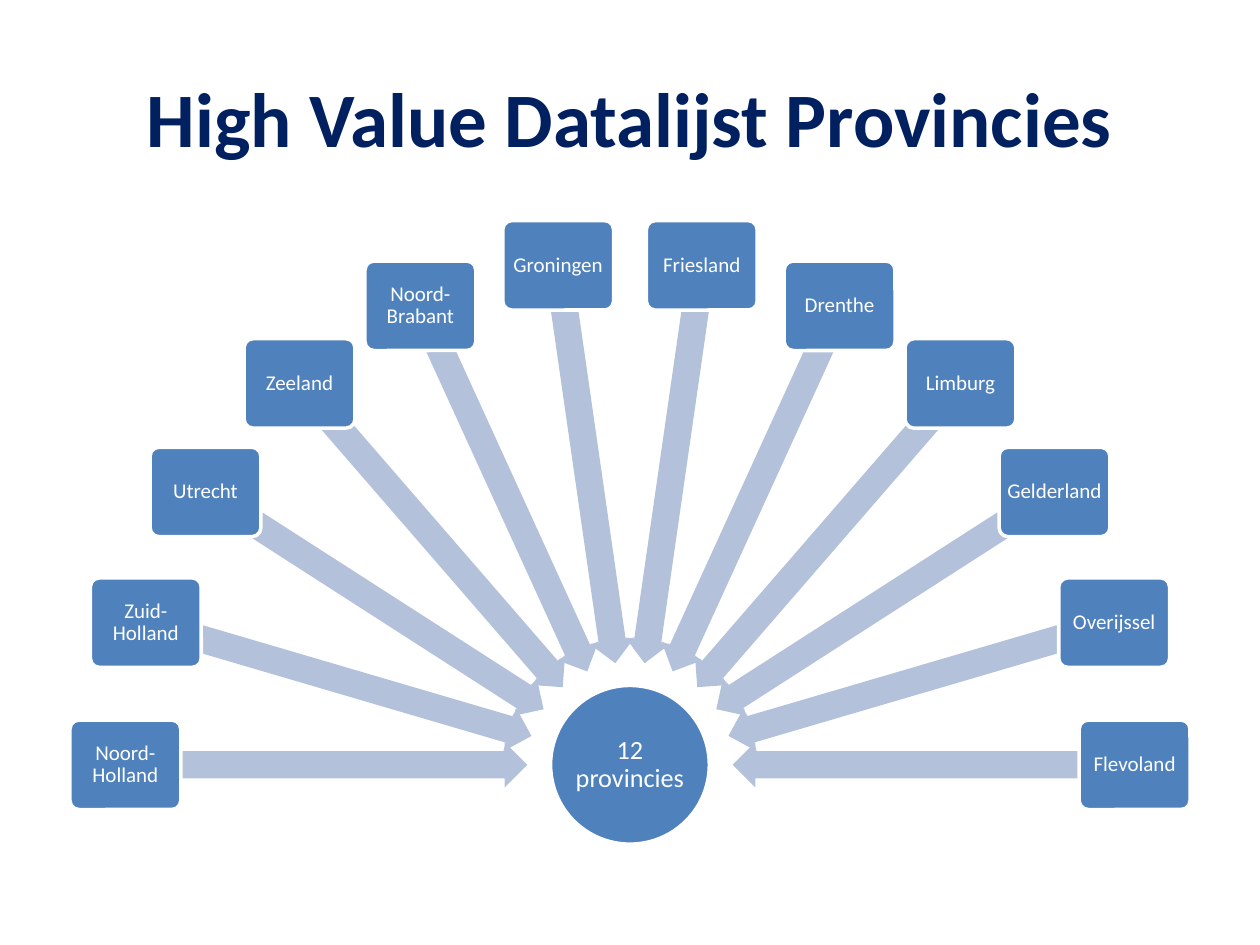
import math

from pptx import Presentation, util as u
from pptx.dml.color import RGBColor
from pptx.enum import shapes, text

COLORS = {"title": "002060", "node": "4F81BD", "arrow": "B3C1DB", "white": "FFFFFF"}
COLS, ROWS = 100, 75  # square grid cells of 0.1 inch
HUB = (50, 60.7)
BOX_RADIUS, ARROW_RADIUS = 40.05, 24.1
PROVINCES = [
    "Noord-Holland", "Zuid-Holland", "Utrecht", "Zeeland", "Noord-Brabant", "Groningen",
    "Friesland", "Drenthe", "Limburg", "Gelderland", "Overijssel", "Flevoland",
]


class Deck:
    font = "Calibri"

    def __init__(self):
        self.prs = Presentation()
        self.prs.slide_width, self.prs.slide_height = u.Inches(10), u.Inches(7.5)
        self.s = self.prs.slides.add_slide(self.prs.slide_layouts[5])

    def area(self, col, row, cols, rows):
        """Turn grid columns and rows into slide lengths."""
        w, h = self.prs.slide_width / COLS, self.prs.slide_height / ROWS
        return [round(v) for v in (col * w, row * h, cols * w, rows * h)]

    def label(self, sp, words, size, color, bold=False, inset=0.1, spacing=1.0):
        tf = sp.text_frame
        tf.word_wrap = True
        tf.auto_size = text.MSO_AUTO_SIZE.NONE
        tf.vertical_anchor = text.MSO_ANCHOR.MIDDLE
        tf.margin_left = tf.margin_right = u.Inches(inset)
        tf.margin_top = tf.margin_bottom = u.Inches(min(inset, 0.05))
        p = tf.paragraphs[0]
        p.alignment = text.PP_ALIGN.CENTER
        p.line_spacing = spacing
        r = p.add_run()
        r.text = words
        r.font.name, r.font.size, r.font.bold = self.font, u.Pt(size), bold
        r.font.color.rgb = RGBColor.from_string(COLORS[color])

    def title(self, words, *cells):
        sp = self.s.shapes.title
        sp.left, sp.top, sp.width, sp.height = self.area(*cells)
        self.label(sp, words, 44, "title", bold=True)

    def shape(self, kind, center, cols, rows, fill):
        x, y = center
        cells = self.area(x - cols / 2, y - rows / 2, cols, rows)
        sp = self.s.shapes.add_shape(kind, *cells)
        sp.shadow.inherit = False
        sp.fill.solid()
        sp.fill.fore_color.rgb = RGBColor.from_string(COLORS[fill])
        sp.line.fill.background()
        return sp

    def node(self, kind, center, cols, rows, words, size, inset):
        sp = self.shape(kind, center, cols, rows, "node")
        sp.line.color.rgb = RGBColor.from_string(COLORS["white"])
        sp.line.width = u.Pt(2)
        if kind == shapes.MSO_SHAPE.ROUNDED_RECTANGLE:
            sp.adjustments[0] = 0.1
        self.label(sp, words, size, "white", inset=inset, spacing=0.9)

    def arrow(self, center, cols, rows, rotation):
        sp = self.shape(shapes.MSO_SHAPE.LEFT_ARROW, center, cols, rows, "arrow")
        sp.adjustments[0], sp.adjustments[1] = 0.6, 0.5
        sp.rotation = rotation


def around_hub(radius, degrees):
    a = math.radians(degrees)
    return HUB[0] + radius * math.cos(a), HUB[1] + radius * math.sin(a)


def main():
    deck = Deck()
    deck.title("High Value Datalijst Provincies", 5, 3, 90, 12.5)

    # Hub
    deck.node(shapes.MSO_SHAPE.OVAL, HUB, 12.6, 12.6, "12 provincies", 15, 0.01)

    # Provinces on a half circle, each with an arrow to the hub
    step = 180 / (len(PROVINCES) - 1)
    for i, name in enumerate(PROVINCES):
        degrees = 180 + i * step
        deck.arrow(around_hub(ARROW_RADIUS, degrees), 31.9, 3.6, degrees % 360)
        deck.node(shapes.MSO_SHAPE.ROUNDED_RECTANGLE, around_hub(BOX_RADIUS, degrees),
                  8.8, 7.1, name, 12, 0.03)

    deck.prs.save("out.pptx")


if __name__ == "__main__":
    main()
